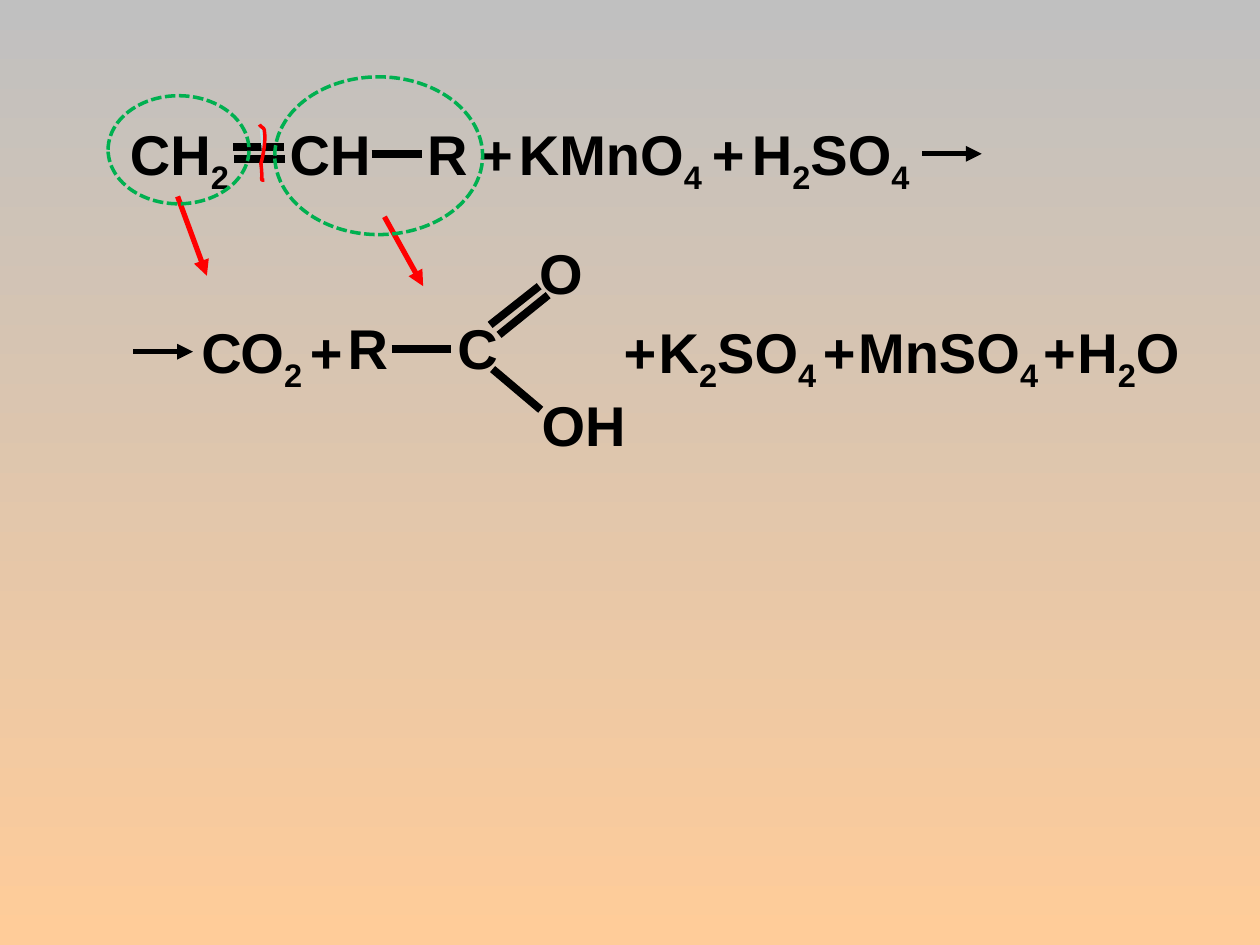
from lxml import etree
from pptx import Presentation
from pptx import util as u
from pptx.dml.color import RGBColor
from pptx.enum import dml, shapes, text
from pptx.oxml import ns

BLACK = RGBColor(0x00, 0x00, 0x00)
RED = RGBColor(0xFF, 0x00, 0x00)
GREEN = RGBColor(0x00, 0xB0, 0x50)
PALE = RGBColor(0xBB, 0xE0, 0xE3)
SILVER = RGBColor(0xC0, 0xC0, 0xC0)
PEACH = RGBColor(0xFF, 0xCC, 0x99)


def bezier(p0, p1, p2, p3, steps=8):
    for i in range(1, steps + 1):
        t = i / steps
        yield tuple(
            (1 - t) ** 3 * a + 3 * (1 - t) ** 2 * t * b + 3 * (1 - t) * t ** 2 * c + t ** 3 * d
            for a, b, c, d in zip(p0, p1, p2, p3)
        )


class ReactionSlide:
    font = "Arial"
    size = u.Pt(32)
    height = 1.37

    def __init__(self, s):
        self.s = s
        self.target = s.shapes

    def background(self, top, bottom):
        fill = self.s.background.fill
        fill.gradient()
        fill.gradient_angle = 270
        for stop, color in zip(fill.gradient_stops, (top, bottom)):
            stop.color.rgb = color

    def start_group(self):
        self.target = self.s.shapes.add_group_shape().shapes

    def end_group(self):
        self.target = self.s.shapes

    def formula(self, x, y, w, label):
        sp = self.target.add_textbox(u.Cm(x), u.Cm(y), u.Cm(w), u.Cm(self.height))
        tf = sp.text_frame
        tf.margin_left = tf.margin_right = tf.margin_top = tf.margin_bottom = 0
        tf.word_wrap = False
        tf.auto_size = text.MSO_AUTO_SIZE.SHAPE_TO_FIT_TEXT
        p = tf.paragraphs[0]
        for part in label.split():
            r = p.add_run()
            r.text = part
            r.font.name = self.font
            r.font.size = self.size
            r.font.bold = True
            r.font.color.rgb = BLACK
            if part.isdigit():
                r.font._element.set("baseline", "-25000")

    def line(self, x1, y1, x2, y2, color=BLACK, width=4.5, arrow=False):
        sp = self.target.add_connector(
            shapes.MSO_CONNECTOR.STRAIGHT, u.Cm(x1), u.Cm(y1), u.Cm(x2), u.Cm(y2))
        sp.line.color.rgb = color
        sp.line.width = u.Pt(width)
        if arrow:
            etree.SubElement(sp.line._get_or_add_ln(), ns.qn("a:tailEnd"), type="triangle")
        etree.SubElement(sp._element.spPr, ns.qn("a:effectLst"))

    def arrow(self, x1, y1, x2, y2, color=BLACK):
        self.line(x1, y1, x2, y2, color, 3, True)

    def ring(self, x, y, w, h):
        sp = self.target.add_shape(
            shapes.MSO_SHAPE.OVAL, u.Cm(x), u.Cm(y), u.Cm(w), u.Cm(h))
        sp.shadow.inherit = False
        sp.fill.background()
        sp.line.color.rgb = GREEN
        sp.line.width = u.Pt(2)
        sp.line.dash_style = dml.MSO_LINE.SQUARE_DOT

    def cut(self, start, curves):
        points = [start]
        for curve in curves:
            points += bezier(points[-1], *curve)
        points = [(u.Cm(x), u.Cm(y)) for x, y in points]
        fb = self.target.build_freeform(*points[0])
        fb.add_line_segments(points[1:], close=False)
        sp = fb.convert_to_shape()
        sp.shadow.inherit = False
        sp.fill.solid()
        sp.fill.fore_color.rgb = PALE
        sp.line.color.rgb = RED
        sp.line.width = u.Pt(2)


def main():
    prs = Presentation()
    prs.slide_width, prs.slide_height = u.Cm(25.4), u.Cm(19.05)
    s = ReactionSlide(prs.slides.add_slide(prs.slide_layouts[6]))
    s.background(SILVER, PEACH)

    reagents, products = 2.41, 6.41
    for x, w, label in (
        (9.68, 0.66, "+"), (10.46, 3.78, "KMnO 4"),
        (14.35, 0.66, "+"), (15.16, 3.33, "H 2 SО 4"),
    ):
        s.formula(x, reagents, w, label)
    for x, w, label in (
        (16.59, 0.66, "+"), (17.3, 3.71, "MnSO 4"),
        (12.57, 0.66, "+"), (13.28, 3.33, "K 2 SО 4"),
        (21.03, 0.66, "+"), (21.72, 2.13, "H 2 О"),
        (6.25, 0.66, "+"), (4.06, 2.11, "СО 2"),
    ):
        s.formula(x, products, w, label)
    s.arrow(18.59, 3.1, 19.79, 3.1)
    s.arrow(2.69, 7.09, 3.89, 7.09)

    s.start_group()
    for x, y, w, label in (
        (7.01, 6.32, 0.84, "R"), (9.22, 6.32, 0.71, "C"),
        (10.87, 4.8, 0.89, "О"), (10.92, 7.87, 1.73, "ОН"),
    ):
        s.formula(x, y, w, label)
    for bond in (
        (7.9, 7.04, 9.09, 7.04), (9.88, 6.55, 10.87, 5.77),
        (10.06, 6.75, 11.05, 5.95), (9.93, 7.44, 10.9, 8.26),
    ):
        s.line(*bond)
    s.end_group()

    s.start_group()
    for x, w, label in ((5.84, 1.65, "CH"), (2.62, 2.01, "CH 2"), (8.61, 0.81, "R")):
        s.formula(x, reagents, w, label)
    for x, y in ((4.72, 3.2), (4.7, 2.97), (7.49, 3.1)):
        s.line(x, y, x + 1.02, y)
    s.end_group()

    s.cut((5.23, 2.51), (
        ((5.26, 2.57), (5.33, 2.57), (5.33, 2.64)),
        ((5.36, 2.82), (5.31, 3.12), (5.26, 3.3)),
        ((5.31, 3.66), (5.23, 3.63), (5.33, 3.63)),
    ))
    s.arrow(3.58, 3.96, 4.17, 5.56, RED)
    s.arrow(7.75, 4.37, 8.53, 5.77, RED)
    s.ring(2.18, 1.93, 2.84, 2.18)
    s.ring(5.54, 1.55, 4.19, 3.18)

    prs.save("out.pptx")


if __name__ == "__main__":
    main()
